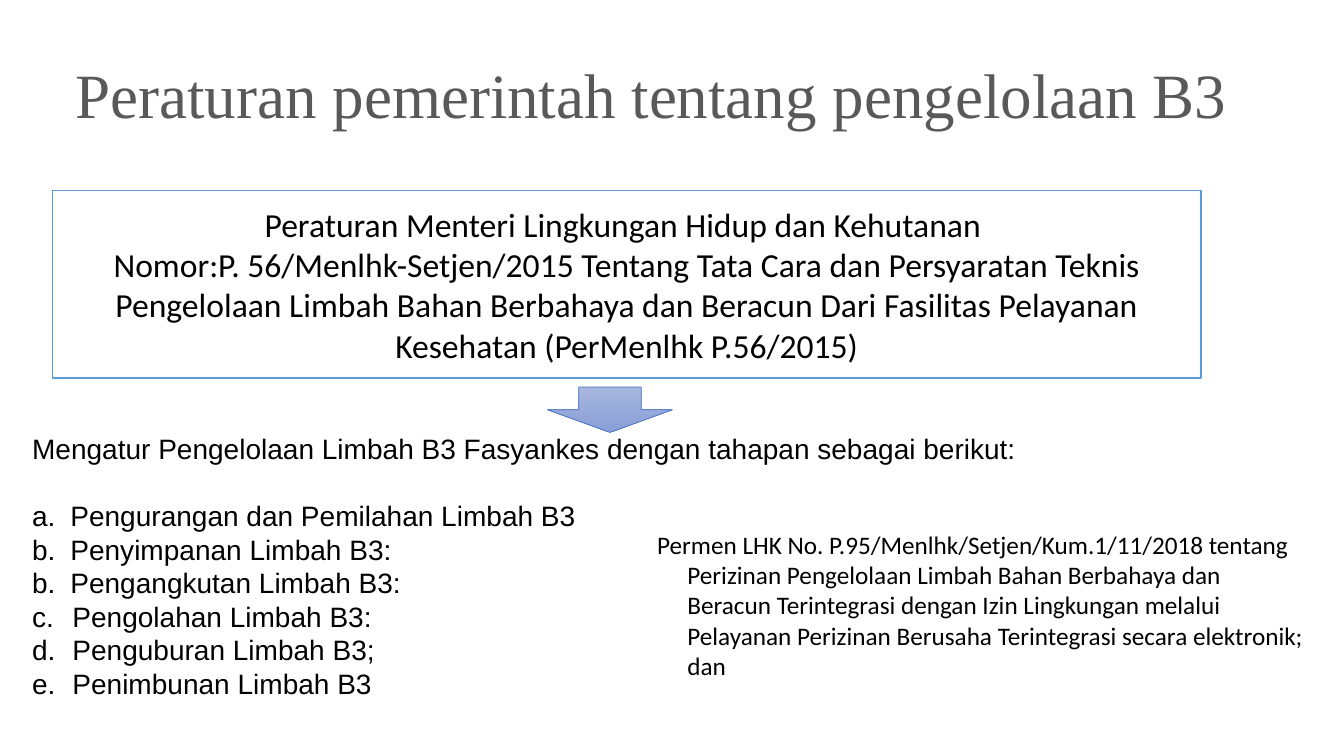
from lxml import etree
from pptx import Presentation
from pptx.dml.color import RGBColor as RGB
from pptx.enum.shapes import MSO_SHAPE as SHAPE
from pptx.enum.text import MSO_ANCHOR as ANCHOR, MSO_AUTO_SIZE as FIT, PP_ALIGN as ALIGN
from pptx.oxml.ns import qn
from pptx.util import Inches, Pt

HUES = {
    "title": "595959", "text": "000000", "box": "FFFFFF", "edge": "5B9BD5",
    "light": "A8B7DF", "dark": "889ED7", "rim": "4472C4",
}
TITLE = dict(name="Times New Roman", size=Pt(45))
RULE = dict(name="Calibri", size=Pt(24))
STEP = dict(name="Arial", size=Pt(20))
NOTE = dict(name="Calibri", size=Pt(18))

RULES = [
    "Peraturan Menteri Lingkungan Hidup dan Kehutanan ",
    "Nomor:P. 56/Menlhk-Setjen/2015 Tentang Tata Cara dan Persyaratan Teknis "
    "Pengelolaan Limbah Bahan Berbahaya dan Beracun Dari Fasilitas Pelayanan "
    "Kesehatan (PerMenlhk P.56/2015)",
]
INTRO = "Mengatur Pengelolaan Limbah B3 Fasyankes dengan tahapan sebagai berikut:"
# Text, first number of its list, hanging indent in inches
STEPS = [
    ("Pengurangan dan Pemilahan Limbah B3", 1, 0.38),
    ("Penyimpanan Limbah B3:", 1, 0.38),
    ("Pengangkutan Limbah B3:", 2, 0.38),
    ("Pengolahan Limbah B3:", 3, 0.4),
    ("Penguburan Limbah B3;", 3, 0.4),
    ("Penimbunan Limbah B3", 3, 0.4),
]
PERMIT = (
    "Permen LHK No. P.95/Menlhk/Setjen/Kum.1/11/2018 tentang Perizinan Pengelolaan "
    "Limbah Bahan Berbahaya dan Beracun Terintegrasi dengan Izin Lingkungan melalui "
    "Pelayanan Perizinan Berusaha Terintegrasi secara elektronik; dan"
)


def hue(key):
    return RGB.from_string(HUES[key])


def place(*spot):
    return [Inches(v) for v in spot]


def write(frame, lines, style, color="text", align=ALIGN.LEFT):
    """Fill the frame with one paragraph per line and return the paragraphs."""
    frame.word_wrap = True
    for i, line in enumerate(lines):
        para = frame.add_paragraph() if i else frame.paragraphs[0]
        para.text = line
        para.alignment = align
        for run in para.runs:
            for key, value in style.items():
                setattr(run.font, key, value)
            run.font.color.rgb = hue(color)
    return frame.paragraphs


def hang(para, depth):
    props = para._p.get_or_add_pPr()
    props.set("marL", str(Inches(depth)))
    props.set("indent", str(-Inches(depth)))
    return props


def letter(para, start, depth):
    """Number the paragraph a., b., c. with a hanging indent."""
    props = hang(para, depth)
    face = etree.SubElement(props, qn("a:buFont"))
    face.set("typeface", STEP["name"])
    mark = etree.SubElement(props, qn("a:buAutoNum"))
    mark.set("type", "alphaLcPeriod")
    if start > 1:
        mark.set("startAt", str(start))


def add_text(slide, spot, lines, style):
    box = slide.shapes.add_textbox(*place(*spot))
    paras = write(box.text_frame, lines, style)
    box.text_frame.auto_size = FIT.SHAPE_TO_FIT_TEXT
    return paras


def add_shape(slide, kind, spot, edge, width):
    shape = slide.shapes.add_shape(kind, *place(*spot))
    shape.shadow.inherit = False
    shape.line.color.rgb = hue(edge)
    shape.line.width = Pt(width)
    return shape


def add_title(slide):
    title = slide.shapes.title
    title.left, title.top, title.width, title.height = place(0.65, 1.11, 11.97, 0.47)
    frame = title.text_frame
    frame.auto_size = FIT.NONE
    frame.vertical_anchor = ANCHOR.MIDDLE
    text = "Peraturan pemerintah tentang pengelolaan B3\v"
    para = write(frame, [text], TITLE, "title")[0]
    para.line_spacing = 0.9
    para.font.size = TITLE["size"]
    # The break takes the title's size so that the line keeps its height
    mark = etree.SubElement(para._p.find(qn("a:br")), qn("a:rPr"))
    mark.set("sz", "4500")


def add_rule(slide):
    box = add_shape(slide, SHAPE.RECTANGLE, (0.52, 1.89, 11.39, 1.86), "edge", 1)
    box.fill.solid()
    box.fill.fore_color.rgb = hue("box")
    box.text_frame.vertical_anchor = ANCHOR.MIDDLE
    write(box.text_frame, RULES, RULE, align=ALIGN.CENTER)


def add_steps(slide):
    lines = [INTRO] + [step[0] for step in STEPS]
    intro, *paras = add_text(slide, (0.22, 4.23, 12.4, 3.13), lines, STEP)
    intro.space_after = Pt(24)
    for para, (_, start, depth) in zip(paras, STEPS):
        letter(para, start, depth)


def add_arrow(slide):
    arrow = add_shape(slide, SHAPE.DOWN_ARROW, (5.43, 3.84, 1.24, 0.45), "rim", 0.5)
    arrow.fill.gradient()
    arrow.fill.gradient_angle = 270
    for stop, key in zip(arrow.fill.gradient_stops, ("light", "dark")):
        stop.color.rgb = hue(key)


def main():
    deck = Presentation()
    deck.slide_width, deck.slide_height = place(13.33, 7.5)
    slide = deck.slides.add_slide(deck.slide_layouts[5])
    add_title(slide)
    add_rule(slide)
    add_steps(slide)
    add_arrow(slide)
    permit = add_text(slide, (6.42, 5.2, 6.67, 1.62), [PERMIT], NOTE)[0]
    hang(permit, 0.3)
    deck.save("out.pptx")


if __name__ == "__main__":
    main()
